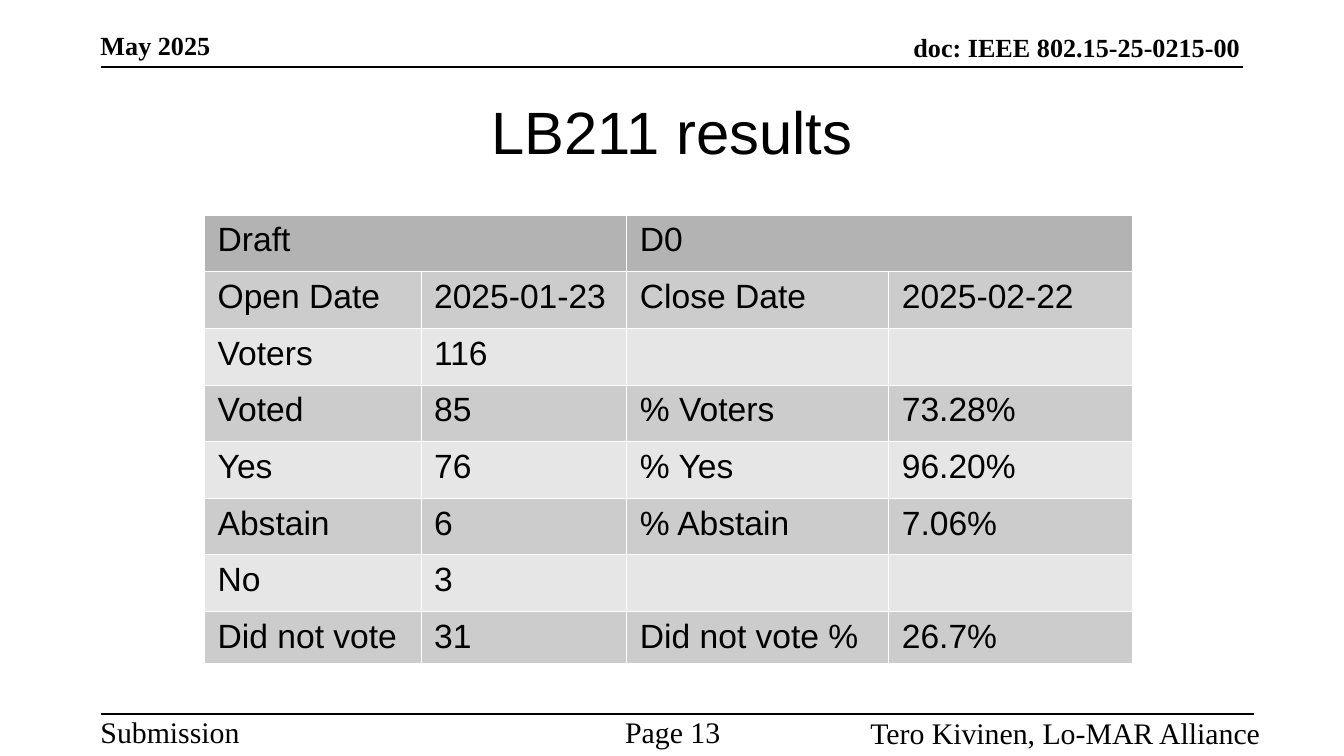
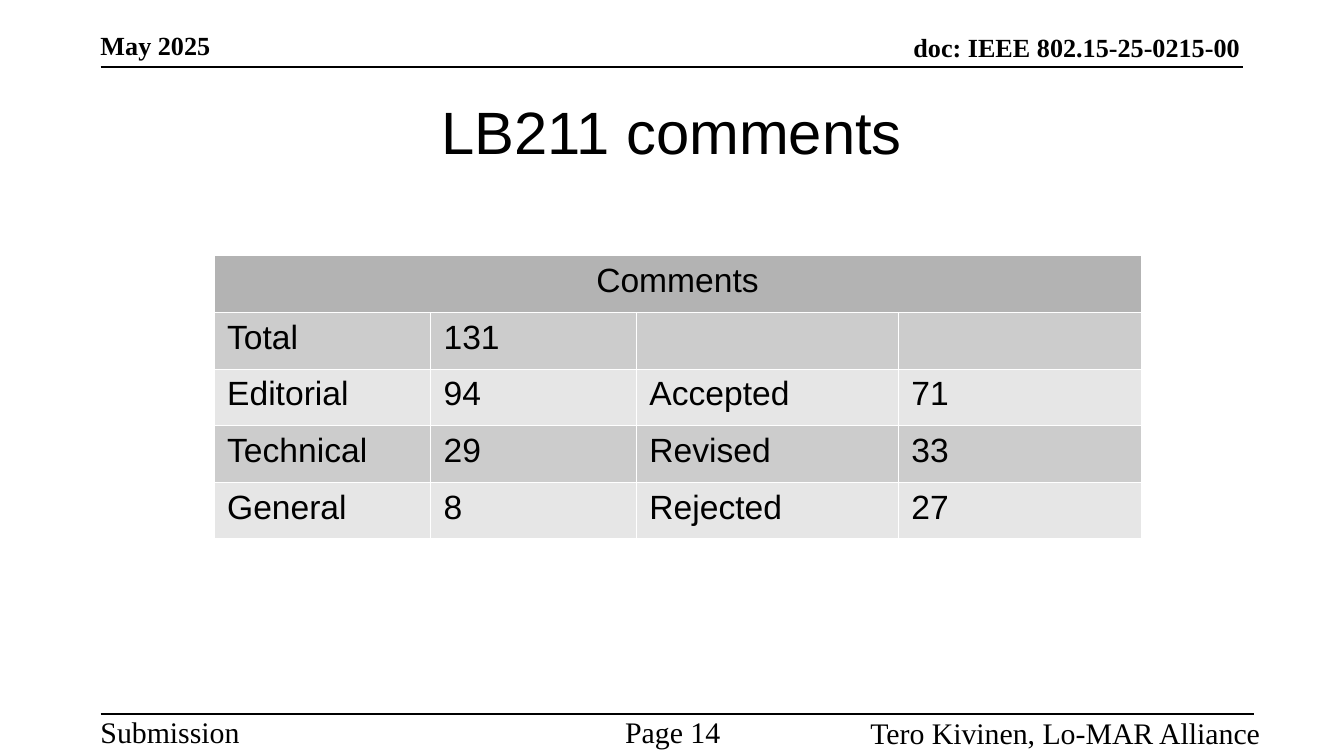
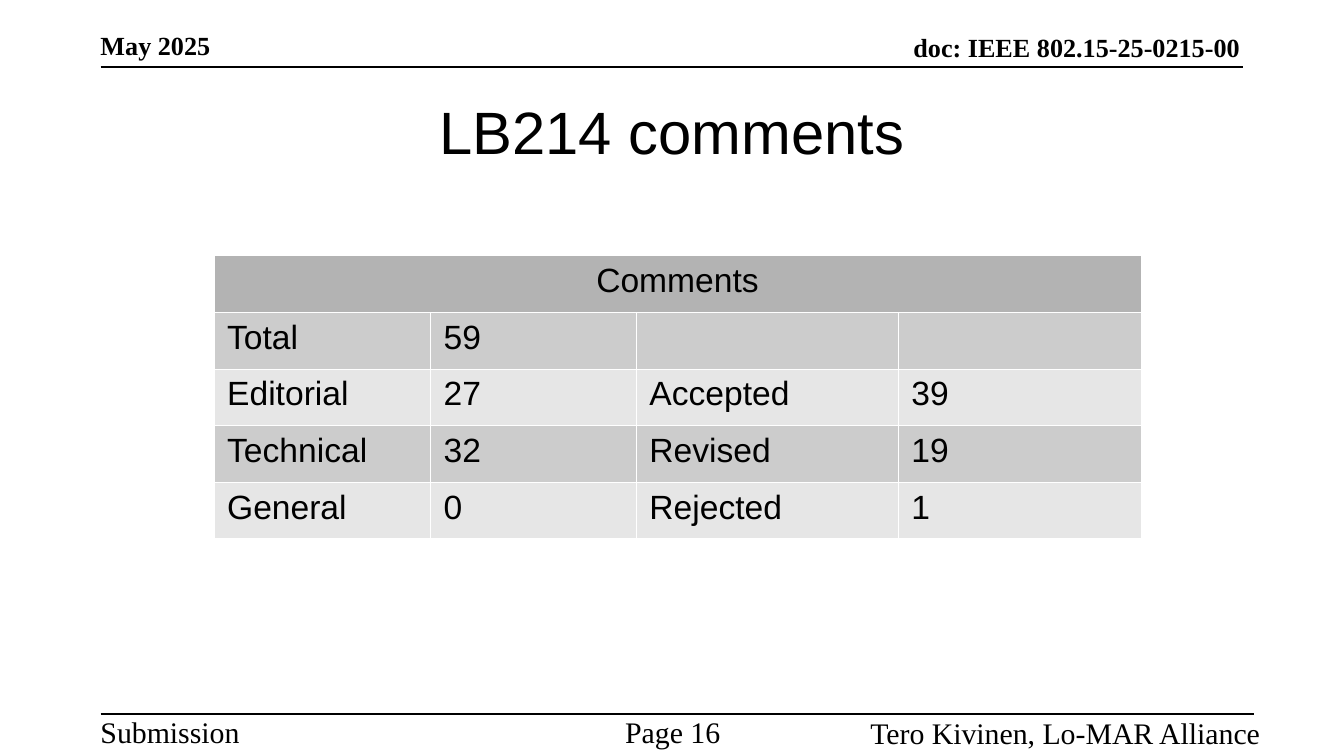
from lxml import etree
from pptx import Presentation
from pptx.dml.color import RGBColor
from pptx.enum.shapes import MSO_CONNECTOR
from pptx.enum.text import MSO_ANCHOR, MSO_AUTO_SIZE, PP_ALIGN
from pptx.oxml.ns import qn
from pptx.util import Cm, Pt

LEFT, CENTER, RIGHT = PP_ALIGN.LEFT, PP_ALIGN.CENTER, PP_ALIGN.RIGHT
TOP, MIDDLE, BOTTOM = MSO_ANCHOR.TOP, MSO_ANCHOR.MIDDLE, MSO_ANCHOR.BOTTOM
STRAIGHT = MSO_CONNECTOR.STRAIGHT
NO_AUTOFIT = MSO_AUTO_SIZE.NONE
TITLE_ONLY_LAYOUT = 5

BLACK = "000000"
WHITE = "FFFFFF"
HEADING_FILL = "B3B3B3"
BAND_FILLS = ("CCCCCC", "E6E6E6")

TITLE_FONT = {"name": "Arial", "size": Pt(32), "bold": False}
TABLE_FONT = {"name": "Arial", "size": Pt(18), "bold": False}
HEADER_FONT = {"name": "Times New Roman", "size": Pt(14), "bold": True}
FOOTER_FONT = {"name": "Times New Roman", "size": Pt(16), "bold": False}
FRAME_FORMAT = {
    "word_wrap": True,
    "auto_size": NO_AUTOFIT,
    "margin_left": 0,
    "margin_top": 0,
    "margin_right": 0,
    "margin_bottom": 0,
}

PAGE_LEFT = 1.9
HEADER_LINE_TOP = 1.27
FOOTER_TOP = 13.49
COLUMN_WIDTHS = (4.09, 3.89, 4.95, 4.6)
ROW_HEIGHT = 1.07
BORDER_WIDTH = 0.06

RESULT_ROWS = (
    ("Draft", "", "D0", ""),
    ("Open Date", "2025-01-23", "Close Date", "2025-02-22"),
    ("Voters", "116", "", ""),
    ("Voted", "85", "% Voters", "73.28%"),
    ("Yes", "76", "% Yes", "96.20%"),
    ("Abstain", "6", "% Abstain", "7.06%"),
    ("No", "3", "", ""),
    ("Did not vote", "31", "Did not vote %", "26.7%"),
)


def rgb(color):
    return RGBColor.from_string(color)


def set_attributes(target, values):
    for name, value in values.items():
        setattr(target, name, value)


def write_text(text_frame, text, font, alignment):
    paragraph = text_frame.paragraphs[0]
    paragraph.alignment = alignment
    run = paragraph.add_run()
    run.text = text
    set_attributes(run.font, font)
    run.font.color.rgb = rgb(BLACK)


def fill_frame(shape, text, font, alignment, anchor):
    set_attributes(shape.text_frame, FRAME_FORMAT)
    shape.text_frame.vertical_anchor = anchor
    write_text(shape.text_frame, text, font, alignment)


def add_label(slide, box, text, font, alignment, anchor):
    shape = slide.shapes.add_textbox(*map(Cm, box))
    fill_frame(shape, text, font, alignment, anchor)


def add_rule(slide, top, right):
    connector = slide.shapes.add_connector(
        STRAIGHT, Cm(PAGE_LEFT), Cm(top), Cm(right), Cm(top)
    )
    connector.line.color.rgb = rgb(BLACK)
    connector.line.width = Pt(1)
    etree.SubElement(connector._element.spPr, qn("a:effectLst"))


def add_header(slide):
    add_label(slide, (8.61, 0.81, 14.83, 0.38), "doc: IEEE 802.15-25-0215-00",
              HEADER_FONT, RIGHT, BOTTOM)
    add_label(slide, (PAGE_LEFT, 0.76, 7.09, 0.38), "May 2025",
              HEADER_FONT, LEFT, BOTTOM)
    add_rule(slide, HEADER_LINE_TOP, 23.5)


def add_footer(slide, page):
    add_rule(slide, FOOTER_TOP, 23.7)
    add_label(slide, (PAGE_LEFT, FOOTER_TOP, 4.75, 0.58), "Submission",
              FOOTER_FONT, LEFT, TOP)
    add_label(slide, (10.41, FOOTER_TOP, 4.75, 0.58), f"Page {page} ",
              FOOTER_FONT, CENTER, TOP)
    add_label(slide, (14.5, 13.51, 9.32, 0.58), "Tero Kivinen, Lo-MAR Alliance",
              FOOTER_FONT, RIGHT, TOP)


def set_title(slide, text):
    title = slide.shapes.title
    box = {"left": 1.27, "top": HEADER_LINE_TOP, "width": 22.86, "height": 2.39}
    set_attributes(title, {name: Cm(value) for name, value in box.items()})
    fill_frame(title, text, TITLE_FONT, CENTER, MIDDLE)


def format_cell(cell, color):
    properties = cell._tc.get_or_add_tcPr()
    for side in ("a:lnL", "a:lnR", "a:lnT", "a:lnB"):
        border = etree.SubElement(properties, qn(side), w=str(Pt(BORDER_WIDTH)))
        fill = etree.SubElement(border, qn("a:solidFill"))
        etree.SubElement(fill, qn("a:srgbClr"), val=WHITE)
    cell.fill.solid()
    cell.fill.fore_color.rgb = rgb(color)


def add_grid(slide, left, top, rows, heading_span, heading_alignment):
    table = slide.shapes.add_table(
        len(rows), len(COLUMN_WIDTHS), Cm(left), Cm(top),
        Cm(sum(COLUMN_WIDTHS)), Cm(ROW_HEIGHT * len(rows)),
    ).table
    set_attributes(table, {"first_row": False, "horz_banding": False})
    for column, width in zip(table.columns, COLUMN_WIDTHS):
        column.width = Cm(width)
    for row_index, row in enumerate(rows):
        table.rows[row_index].height = Cm(ROW_HEIGHT)
        is_heading = row_index == 0
        color = HEADING_FILL if is_heading else BAND_FILLS[(row_index - 1) % 2]
        alignment = heading_alignment if is_heading else LEFT
        for column_index, text in enumerate(row):
            cell = table.cell(row_index, column_index)
            format_cell(cell, color)
            if text:
                write_text(cell.text_frame, text, TABLE_FONT, alignment)
    for start in range(0, len(COLUMN_WIDTHS), heading_span):
        table.cell(0, start).merge(table.cell(0, start + heading_span - 1))
    return table


def add_page(presentation, title, page):
    slide = presentation.slides.add_slide(
        presentation.slide_layouts[TITLE_ONLY_LAYOUT]
    )
    add_header(slide)
    add_footer(slide, page)
    set_title(slide, title)
    return slide


def add_results_page(presentation):
    slide = add_page(presentation, "LB211 results", 13)
    table = add_grid(slide, 3.86, 4.06, RESULT_ROWS, 2, LEFT)
    table.rows[len(RESULT_ROWS) - 1].height = Cm(0.98)


def add_comments_page(presentation, title, page, kinds, resolutions):
    slide = add_page(presentation, title, page)
    editorial, technical, general = kinds
    accepted, revised, rejected = resolutions
    rows = (
        ("Comments", "", "", ""),
        ("Total", str(sum(kinds)), "", ""),
        ("Editorial", str(editorial), "Accepted", str(accepted)),
        ("Technical", str(technical), "Revised", str(revised)),
        ("General", str(general), "Rejected", str(rejected)),
    )
    add_grid(slide, 4.04, 4.83, rows, len(COLUMN_WIDTHS), CENTER)


def main():
    presentation = Presentation()
    presentation.slide_width = Cm(25.4)
    presentation.slide_height = Cm(14.29)
    add_results_page(presentation)
    add_comments_page(presentation, "LB211 comments", 14, (94, 29, 8), (71, 33, 27))
    add_comments_page(presentation, "LB214 comments", 16, (27, 32, 0), (39, 19, 1))
    presentation.save("out.pptx")


if __name__ == "__main__":
    main()
